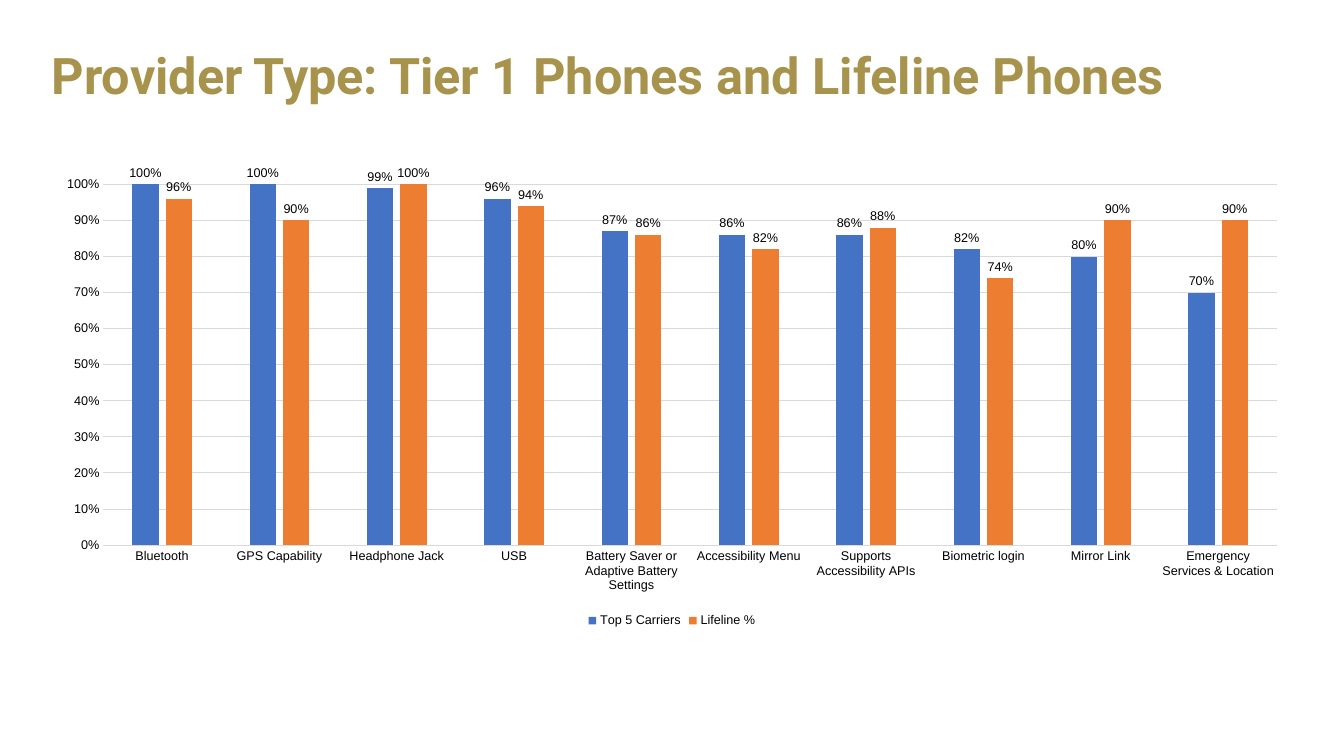
"""Build a slide comparing phone features of Tier 1 and Lifeline providers."""
from dataclasses import dataclass

from pptx import Presentation
from pptx.chart.axis import CategoryAxis, ValueAxis
from pptx.chart.chart import Chart
from pptx.chart.data import CategoryChartData
from pptx.chart.series import BarSeries
from pptx.dml.color import RGBColor
from pptx.dml.line import LineFormat
from pptx.enum.chart import XL_CHART_TYPE, XL_LABEL_POSITION, XL_LEGEND_POSITION, XL_TICK_MARK
from pptx.enum.text import MSO_ANCHOR
from pptx.slide import Slide
from pptx.text.text import Font
from pptx.util import Emu, Pt

COLUMN_CLUSTERED = XL_CHART_TYPE.COLUMN_CLUSTERED
OUTSIDE_END = XL_LABEL_POSITION.OUTSIDE_END
LEGEND_BOTTOM = XL_LEGEND_POSITION.BOTTOM
NO_TICK = XL_TICK_MARK.NONE
MIDDLE = MSO_ANCHOR.MIDDLE

GOLD = RGBColor(0xA7, 0x93, 0x4B)
BLACK = RGBColor(0x00, 0x00, 0x00)
GRID_GRAY = RGBColor(0xD9, 0xD9, 0xD9)
BLUE = RGBColor(0x44, 0x72, 0xC4)
ORANGE = RGBColor(0xED, 0x7D, 0x31)

EMU_PER_PX = 9525
PERCENT = "0%"
BLANK_LAYOUT = 6


@dataclass(frozen=True)
class Box:
    """A rectangle in whole px."""

    left: int
    top: int
    width: int
    height: int

    def emu(self) -> tuple[Emu, Emu, Emu, Emu]:
        """Return the rectangle in EMU."""
        return px(self.left), px(self.top), px(self.width), px(self.height)


@dataclass(frozen=True)
class Provider:
    """One series of columns."""

    name: str
    color: RGBColor
    shares: tuple[float, ...]


TITLE = "Provider Type: Tier 1 Phones and Lifeline Phones"
TITLE_BOX = Box(40, 21, 1200, 107)
CHART_BOX = Box(40, 158, 1200, 444)
FEATURES = (
    "Bluetooth",
    "GPS Capability",
    "Headphone Jack",
    "USB",
    "Battery Saver or Adaptive Battery Settings",
    "Accessibility Menu",
    "Supports Accessibility APIs",
    "Biometric login",
    "Mirror Link",
    "Emergency Services & Location",
)
PROVIDERS = (
    Provider("Top 5 Carriers", BLUE, (1, 1, 0.99, 0.96, 0.87, 0.86, 0.86, 0.82, 0.8, 0.7)),
    Provider("Lifeline %", ORANGE, (0.96, 0.9, 1, 0.94, 0.86, 0.82, 0.88, 0.74, 0.9, 0.9)),
)


def px(length: int) -> Emu:
    """Convert px to EMU."""
    return Emu(length * EMU_PER_PX)


def style_font(font: Font, size: int = 9, name: str = "Arial", color: RGBColor = BLACK,
               bold: bool = False) -> None:
    """Set the face, size, weight and colour of a font."""
    font.name = name
    font.size = Pt(size)
    font.bold = bold
    font.color.rgb = color


def style_line(line: LineFormat) -> None:
    """Make a thin grey line."""
    line.color.rgb = GRID_GRAY
    line.width = Pt(0.75)


def add_title(slide: Slide) -> None:
    """Add the slide heading."""
    frame = slide.shapes.add_textbox(*TITLE_BOX.emu()).text_frame
    frame.word_wrap = True
    frame.vertical_anchor = MIDDLE
    paragraph = frame.paragraphs[0]
    paragraph.text = TITLE
    paragraph.line_spacing = 0.9
    style_font(paragraph.font, 36, "Roboto", GOLD, bold=True)


def style_category_axis(axis: CategoryAxis) -> None:
    """Format the feature axis."""
    axis.major_tick_mark = NO_TICK
    axis.minor_tick_mark = NO_TICK
    style_font(axis.tick_labels.font)
    style_line(axis.format.line)


def style_value_axis(axis: ValueAxis) -> None:
    """Format the percentage axis and its gridlines."""
    axis.minimum_scale = 0
    axis.maximum_scale = 1
    axis.major_unit = 0.1
    axis.major_tick_mark = NO_TICK
    axis.minor_tick_mark = NO_TICK
    axis.tick_labels.number_format = PERCENT
    axis.tick_labels.number_format_is_linked = False
    style_font(axis.tick_labels.font)
    axis.format.line.fill.background()
    axis.has_major_gridlines = True
    style_line(axis.major_gridlines.format.line)


def style_series(series: BarSeries, provider: Provider) -> None:
    """Colour and label the columns of a provider."""
    series.format.fill.solid()
    series.format.fill.fore_color.rgb = provider.color
    series.invert_if_negative = False
    labels = series.data_labels
    labels.show_value = True
    labels.position = OUTSIDE_END
    labels.number_format = PERCENT
    labels.number_format_is_linked = False
    style_font(labels.font)


def add_legend(chart: Chart) -> None:
    """Add the legend under the plot."""
    chart.has_legend = True
    chart.legend.position = LEGEND_BOTTOM
    chart.legend.include_in_layout = False
    style_font(chart.legend.font)


def add_feature_chart(slide: Slide) -> None:
    """Add the clustered columns of feature shares."""
    data = CategoryChartData(number_format=PERCENT)
    data.categories = FEATURES
    for provider in PROVIDERS:
        data.add_series(provider.name, provider.shares)
    chart = slide.shapes.add_chart(COLUMN_CLUSTERED, *CHART_BOX.emu(), data).chart
    chart.has_title = False
    style_font(chart.font, 10)
    plot = chart.plots[0]
    plot.gap_width = 219
    plot.overlap = -27
    plot.vary_by_categories = False
    for series, provider in zip(plot.series, PROVIDERS):
        style_series(series, provider)
    style_category_axis(chart.category_axis)
    style_value_axis(chart.value_axis)
    add_legend(chart)


def main() -> None:
    """Build and save the presentation."""
    presentation = Presentation()
    presentation.slide_width = px(1280)
    presentation.slide_height = px(720)
    slide = presentation.slides.add_slide(presentation.slide_layouts[BLANK_LAYOUT])
    add_title(slide)
    add_feature_chart(slide)
    presentation.save("out.pptx")


if __name__ == "__main__":
    main()
